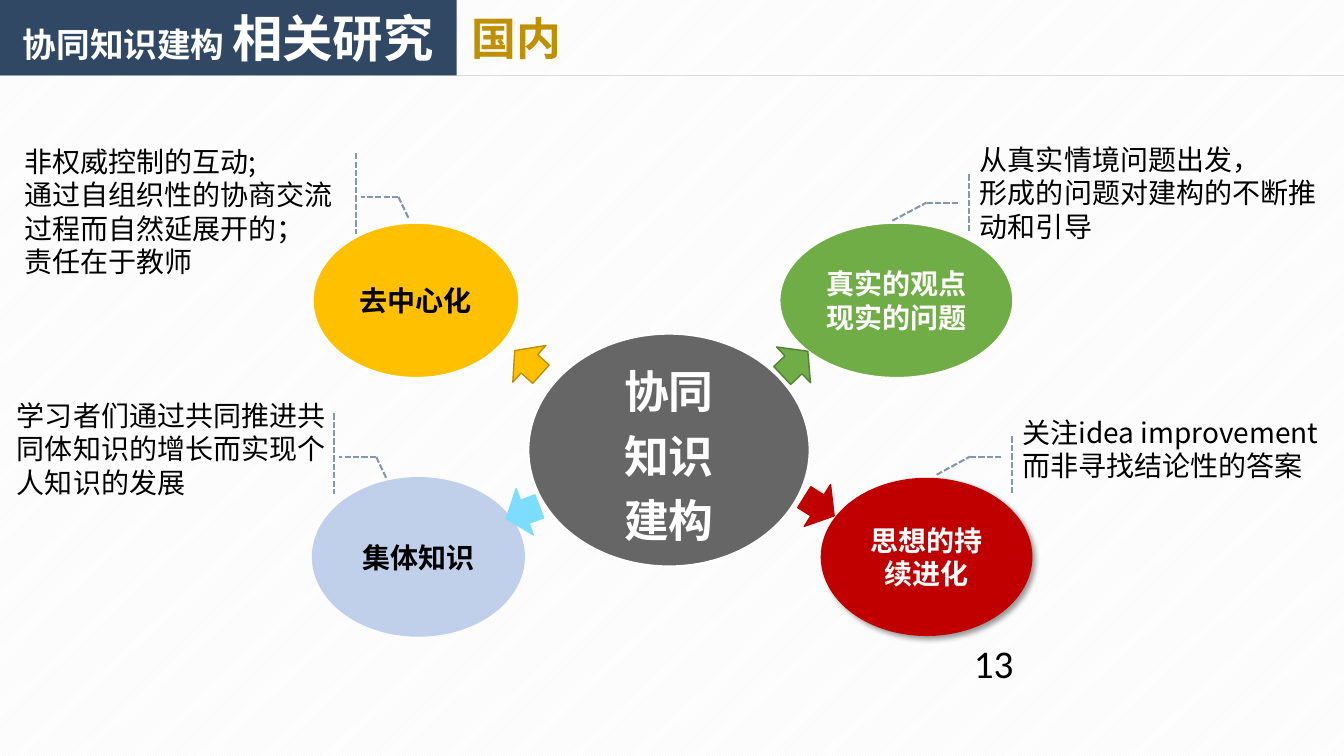
from dataclasses import dataclass

from lxml.etree import SubElement
from pptx import Presentation
from pptx.dml.color import RGBColor
from pptx.enum.dml import MSO_LINE, MSO_PATTERN
from pptx.enum.shapes import MSO_CONNECTOR, MSO_SHAPE
from pptx.enum.text import MSO_ANCHOR, MSO_AUTO_SIZE, PP_ALIGN
from pptx.oxml.ns import qn
from pptx.util import Inches, Pt


@dataclass(frozen=True)
class Theme:
    cjk: str = "Noto Sans CJK SC"
    latin: str = "Calibri"
    white: str = "FFFFFF"
    black: str = "000000"
    stripe: str = "F2F2F2"
    navy: str = "314865"
    gold: str = "BF9000"
    rule: str = "BFBFBF"
    leader: str = "8497B0"
    gray: str = "666666"
    amber: str = "FFC000"
    amber_edge: str = "BD8E00"
    green: str = "70AD47"
    green_edge: str = "538035"
    red: str = "C00000"
    pale_blue: str = "C0CFEA"
    sky: str = "7DDDFF"
    body: int = 20
    subtitle: int = 24
    number: int = 28
    heading: int = 32
    title: int = 36


def rgb(value):
    return RGBColor.from_string(value)


class SlideBuilder:
    def __init__(self, slide, theme):
        self.slide = slide
        self.theme = theme

    def background(self):
        fill = self.slide.background.fill
        fill.patterned()
        fill.pattern = MSO_PATTERN.DARK_UPWARD_DIAGONAL
        fill.fore_color.rgb = rgb(self.theme.stripe)
        fill.back_color.rgb = rgb(self.theme.white)

    def style(self, paragraph, size, color, bold=False, face=None):
        font = paragraph.font
        font.size, font.bold = Pt(size), bold
        font.color.rgb = rgb(color)
        font.name = face or self.theme.cjk
        defaults = paragraph._p.get_or_add_pPr().find(qn("a:defRPr"))
        SubElement(defaults, qn("a:ea"), typeface=font.name)

    def text(self, box, words, size, color=None, bold=False, face=None,
             wrap=True, grow=True, indent=False):
        frame = self.slide.shapes.add_textbox(*map(Inches, box)).text_frame
        frame.word_wrap = wrap
        frame.auto_size = MSO_AUTO_SIZE.SHAPE_TO_FIT_TEXT if grow else MSO_AUTO_SIZE.NONE
        frame.text = words
        for paragraph in frame.paragraphs:
            self.style(paragraph, size, color or self.theme.black, bold, face)
            if indent:
                paragraph.level = 1
                paragraph._p.get_or_add_pPr().set("marL", str(Inches(0.5)))

    def shape(self, kind, box, fill, edge=None, edge_width=1):
        shape = self.slide.shapes.add_shape(kind, *map(Inches, box))
        shape.shadow.inherit = False
        shape.fill.solid()
        shape.fill.fore_color.rgb = rgb(fill)
        if edge:
            shape.line.color.rgb = rgb(edge)
            shape.line.width = Pt(edge_width)
        else:
            shape.line.fill.background()
        return shape

    def label(self, shape, words, size, color, spacing=None):
        frame = shape.text_frame
        frame.word_wrap = True
        frame.vertical_anchor = MSO_ANCHOR.MIDDLE
        frame.text = words
        for paragraph in frame.paragraphs:
            paragraph.alignment = PP_ALIGN.CENTER
            if spacing:
                paragraph.line_spacing = spacing
            self.style(paragraph, size, color, bold=True)

    def ellipse(self, box, words, fill, color, edge=None, edge_width=1.5,
                size=None, spacing=None, shadow=False):
        oval = self.shape(MSO_SHAPE.OVAL, box, fill, edge, edge_width)
        self.label(oval, words, size or self.theme.body, color, spacing)
        if shadow:
            effects = oval._element.spPr.find(qn("a:effectLst"))
            outer = SubElement(effects, qn("a:outerShdw"), blurRad=str(Pt(4)),
                               dist=str(Pt(3)), dir=str(45 * 60000),
                               algn="tl", rotWithShape="0")
            tint = SubElement(outer, qn("a:srgbClr"), val=self.theme.black)
            SubElement(tint, qn("a:alpha"), val="40000")

    def arrow(self, left, top, turn, fill, edge):
        arrow = self.shape(MSO_SHAPE.DOWN_ARROW, (left, top, 0.49, 0.35), fill, edge)
        arrow.rotation = turn
        arrow.adjustments[1] = 0.56

    def line(self, start, end, color, width, dash=None, alpha=None):
        line = self.slide.shapes.add_connector(
            MSO_CONNECTOR.STRAIGHT, *map(Inches, (*start, *end)))
        line.line.color.rgb = rgb(color)
        line.line.width = Pt(width)
        if dash:
            line.line.dash_style = dash
        if alpha:
            tint = next(line._element.spPr.iter(qn("a:srgbClr")))
            SubElement(tint, qn("a:alpha"), val=str(alpha * 1000))
        SubElement(line._element.spPr, qn("a:effectLst"))

    def leader(self, tip, elbow, end_x, bar_x, bar_top, bar_bottom):
        """Bent dashed line from an ellipse, with an upright bar beside the note."""
        for start, end in ((tip, elbow), (elbow, (end_x, elbow[1])),
                           ((bar_x, bar_top), (bar_x, bar_bottom))):
            self.line(start, end, self.theme.leader, 1.5, MSO_LINE.SQUARE_DOT)

    def header(self):
        theme = self.theme
        banner = self.shape(MSO_SHAPE.RECTANGLE, (0, 0, 4.53, 0.75), theme.navy)
        self.label(banner, "协同知识建构 ", theme.subtitle, theme.white)
        topic = banner.text_frame.paragraphs[0].add_run()
        topic.text = "相关研究"
        topic.font.size = Pt(theme.title)
        self.line((0, 0.75), (13.33, 0.75), theme.rule, 0.5, alpha=50)
        self.text((4.58, 0.06, 2.25, 0.64), "国内", theme.heading, theme.gold, bold=True)


def main():
    deck = Presentation()
    deck.slide_width, deck.slide_height = Inches(13.33), Inches(7.5)
    theme = Theme()
    page = SlideBuilder(deck.slides.add_slide(deck.slide_layouts[6]), theme)
    page.background()
    page.text((9.56, 6.29, 3.11, 0.4), "13", theme.number, face=theme.latin, grow=False)

    page.ellipse((5.24, 3.31, 2.79, 2.31), "协同\n知识\n建构", theme.gray, theme.white,
                 theme.white, size=theme.heading, spacing=1.2)
    page.ellipse((7.73, 2.21, 2.32, 1.54), "真实的观点\n现实的问题",
                 theme.green, theme.white, theme.white)
    page.ellipse((8.14, 4.74, 2.1, 1.57), "思想的持续进化",
                 theme.red, theme.white, shadow=True)
    page.ellipse((3.1, 4.74, 2.1, 1.57), "集体知识",
                 theme.pale_blue, theme.black, theme.pale_blue, edge_width=1)
    page.ellipse((3.1, 2.21, 2.05, 1.54), "去中心化",
                 theme.amber, theme.black, theme.white)

    for arrow in (
        (4.94, 4.91, 69.5, theme.sky, theme.sky),
        (7.88, 4.85, 302, theme.red, theme.red),
        (7.64, 3.43, 226.5, theme.green, theme.green_edge),
        (4.99, 3.42, 132.1, theme.amber, theme.amber_edge),
    ):
        page.arrow(*arrow)

    for leader in (
        ((8.85, 2.19), (9.19, 2.01), 9.5, 9.61, 1.73, 2.3),
        ((9.29, 4.71), (9.62, 4.53), 9.94, 10.04, 4.33, 4.9),
        ((3.83, 4.74), (3.73, 4.53), 3.36, 3.31, 4.1, 4.9),
        ((4.05, 2.16), (3.95, 1.95), 3.58, 3.53, 1.52, 2.32),
    ):
        page.leader(*leader)

    page.text((9.62, 1.36, 3.68, 1.11),
              "从真实情境问题出发，\n形成的问题对建构的不断推动和引导", theme.body)
    page.text((10.04, 4.07, 3.22, 0.77),
              "关注idea improvement\n而非寻找结论性的答案", theme.body, wrap=False)
    page.text((-0.43, 3.9, 3.93, 1.11),
              "学习者们通过共同推进共同体知识的增长而实现个人知识的发展",
              theme.body, indent=True)
    page.text((-0.36, 1.38, 3.93, 1.45),
              "非权威控制的互动;\n通过自组织性的协商交流过程而自然延展开的；\n责任在于教师",
              theme.body, indent=True)
    page.header()
    deck.save("out.pptx")


if __name__ == "__main__":
    main()
